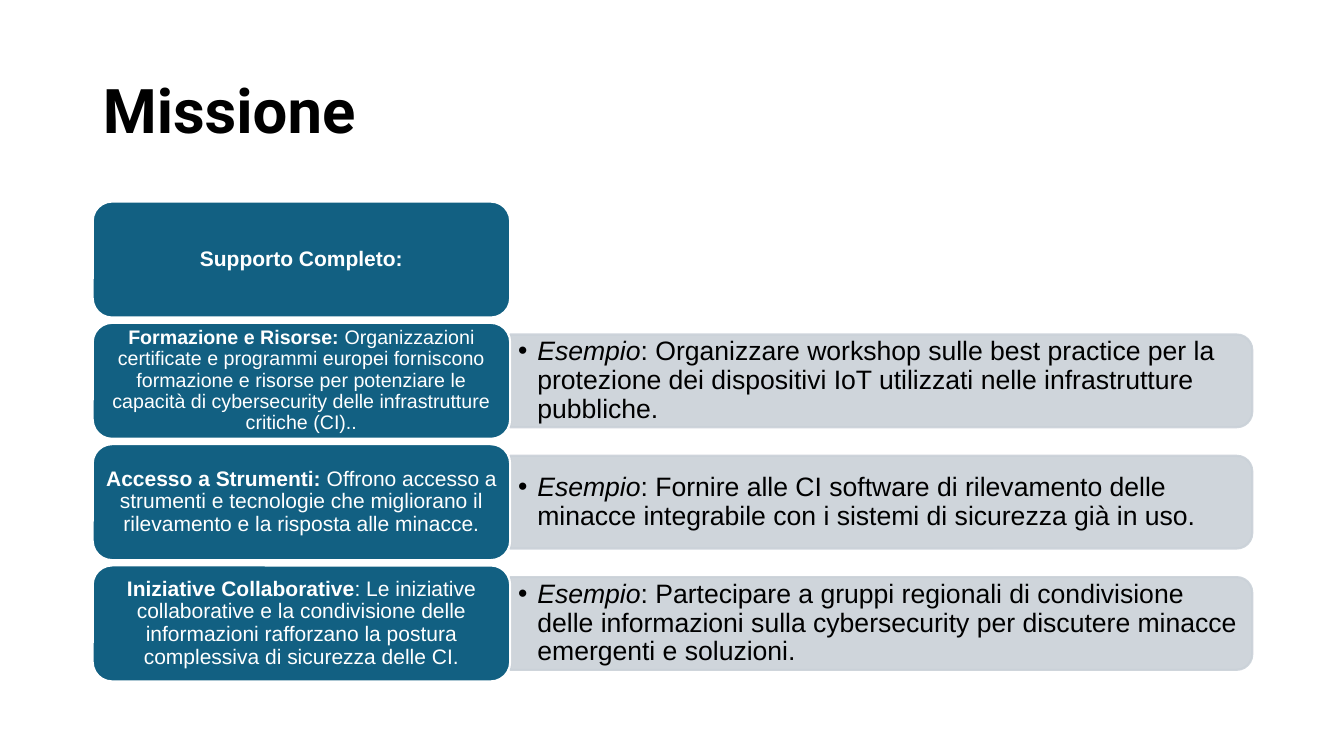
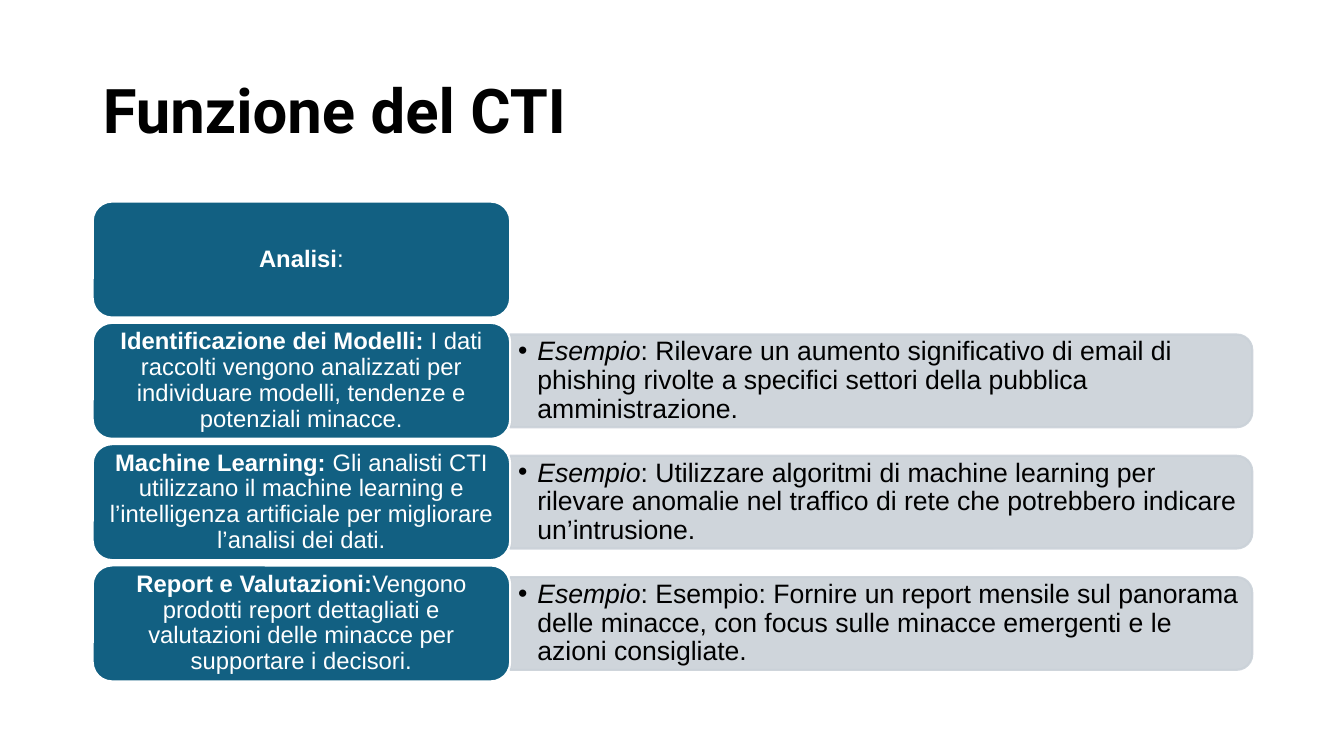
from lxml import etree
from pptx import Presentation
from pptx.dml.color import RGBColor
from pptx.enum import shapes, text
from pptx.oxml.ns import qn
from pptx.util import Inches, Pt

COLORS = {"card": "126082", "band": "CAD1D8", "white": "FFFFFF", "black": "000000"}
LEFT, TOP, LAST_TOP, ROWS = 0.92, 2, 5.61, 4
PITCH = (LAST_TOP - TOP) / (ROWS - 1)
CARD_W, CARD_H = 4.14, 1.15
BAND_W, BAND_H = 7.36, 0.92
BAND_LEFT = LEFT + CARD_W
BAND_INSET = 0.05
CORNER = 0.167
BAND_ALPHA = 90
BULLET_INDENT = 0.19
EXAMPLE_SIZE = 19

SLIDES = [
    ("Missione", [
        (15, "Supporto Completo:", "", ""),
        (14, "Formazione e Risorse: ",
         "Organizzazioni certificate e programmi europei forniscono formazione e risorse "
         "per potenziare le capacità di cybersecurity delle infrastrutture critiche (CI)..",
         "Organizzare workshop sulle best practice per la protezione dei dispositivi IoT "
         "utilizzati nelle infrastrutture pubbliche."),
        (15, "Accesso a Strumenti: ",
         "Offrono accesso a strumenti e tecnologie che migliorano il rilevamento e la "
         "risposta alle minacce.",
         "Fornire alle CI software di rilevamento delle minacce integrabile con i sistemi "
         "di sicurezza già in uso."),
        (15, "Iniziative Collaborative",
         ": Le iniziative collaborative e la condivisione delle informazioni rafforzano la "
         "postura complessiva di sicurezza delle CI.",
         "Partecipare a gruppi regionali di condivisione delle informazioni sulla "
         "cybersecurity per discutere minacce emergenti e soluzioni."),
    ]),
    ("Funzione del CTI", [
        (17, "Analisi", ":", ""),
        (17, "Identificazione dei Modelli: ",
         "I dati raccolti vengono analizzati per individuare modelli, tendenze e "
         "potenziali minacce.",
         "Rilevare un aumento significativo di email di phishing rivolte a specifici "
         "settori della pubblica amministrazione."),
        (17, "Machine Learning: ",
         "Gli analisti CTI utilizzano il machine learning e l’intelligenza artificiale "
         "per migliorare l’analisi dei dati.",
         "Utilizzare algoritmi di machine learning per rilevare anomalie nel traffico di "
         "rete che potrebbero indicare un’intrusione."),
        (17, "Report e Valutazioni:",
         "Vengono prodotti report dettagliati e valutazioni delle minacce per supportare "
         "i decisori.",
         "Esempio: Fornire un report mensile sul panorama delle minacce, con focus sulle "
         "minacce emergenti e le azioni consigliate."),
    ]),
]


def add_run(p, words, *, size, color, font="Arial", bold=False, italic=False):
    r = p.add_run()
    r.text = words
    r.font.size = Pt(size)
    r.font.name = font
    r.font.bold = bold
    r.font.italic = italic
    r.font.color.rgb = RGBColor.from_string(COLORS[color])


def set_alpha(fill, percent):
    """Make a solid fill partly transparent."""
    for clr in fill.iter(qn("a:srgbClr")):
        etree.SubElement(clr, qn("a:alpha")).set("val", str(percent * 1000))


def add_bullet(p):
    pPr = p._p.get_or_add_pPr()
    pPr.set("marL", str(Inches(BULLET_INDENT)))
    pPr.set("indent", str(-Inches(BULLET_INDENT)))
    etree.SubElement(pPr, qn("a:buFont")).set("typeface", "Arial")
    etree.SubElement(pPr, qn("a:buChar")).set("char", "•")


class Deck:
    def __init__(self):
        self.prs = Presentation()
        self.prs.slide_width = Inches(13.33)
        self.prs.slide_height = Inches(7.5)
        self.s = None

    def new_slide(self, title):
        self.s = self.prs.slides.add_slide(self.prs.slide_layouts[5])
        sp = self.s.shapes.title
        sp.left, sp.top = Inches(LEFT), Inches(0.4)
        sp.width, sp.height = Inches(11.5), Inches(1.45)
        p = self.frame(sp, text.PP_ALIGN.LEFT, 0.1, 0.05)
        add_run(p, title, size=44, color="black", font="Roboto", bold=True)

    def frame(self, sp, align, side, edge):
        """Set up a shape's text frame and return its first paragraph."""
        tf = sp.text_frame
        tf.word_wrap = True
        tf.auto_size = text.MSO_AUTO_SIZE.NONE
        tf.vertical_anchor = text.MSO_ANCHOR.MIDDLE
        tf.margin_left = tf.margin_right = Inches(side)
        tf.margin_top = tf.margin_bottom = Inches(edge)
        p = tf.paragraphs[0]
        p.alignment = align
        p.line_spacing = 0.9
        return p

    def block(self, kind, x, y, w, h, fill, line):
        sp = self.s.shapes.add_shape(kind, Inches(x), Inches(y), Inches(w), Inches(h))
        sp.shadow.inherit = False
        sp.adjustments[0] = CORNER
        sp.fill.solid()
        sp.fill.fore_color.rgb = RGBColor.from_string(COLORS[fill])
        sp.line.color.rgb = RGBColor.from_string(COLORS[line])
        sp.line.width = Pt(1.5)
        return sp

    def card(self, y, size, heading, body):
        sp = self.block(shapes.MSO_SHAPE.ROUNDED_RECTANGLE, LEFT, y, CARD_W, CARD_H,
                        "card", "white")
        side = 0.3 * size / 72
        p = self.frame(sp, text.PP_ALIGN.CENTER, side, side / 2)
        add_run(p, heading, size=size, color="white", bold=True)
        if body:
            add_run(p, body, size=size, color="white")

    def band(self, y, example):
        """Draw a band rounded on its right side, with its example as a bullet."""
        x_turned = BAND_LEFT + (BAND_W - BAND_H) / 2
        y_turned = y + (BAND_H - BAND_W) / 2
        sp = self.block(shapes.MSO_SHAPE.ROUND_2_SAME_RECTANGLE, x_turned, y_turned,
                        BAND_H, BAND_W, "band", "band")
        sp.rotation = 90
        set_alpha(sp._element.spPr, BAND_ALPHA)

        box = self.s.shapes.add_textbox(
            Inches(BAND_LEFT), Inches(y + BAND_INSET),
            Inches(BAND_W - BAND_INSET), Inches(BAND_H - 2 * BAND_INSET))
        p = self.frame(box, text.PP_ALIGN.LEFT, 0.08, 0.04)
        add_bullet(p)
        add_run(p, "Esempio", size=EXAMPLE_SIZE, color="black", italic=True)
        add_run(p, ": " + example, size=EXAMPLE_SIZE, color="black")


def main():
    deck = Deck()
    for title, rows in SLIDES:
        deck.new_slide(title)
        for i, (size, heading, body, example) in enumerate(rows):
            y = TOP + i * PITCH
            if example:
                deck.band(y + (CARD_H - BAND_H) / 2, example)
            deck.card(y, size, heading, body)
    deck.prs.save("out.pptx")


if __name__ == "__main__":
    main()
